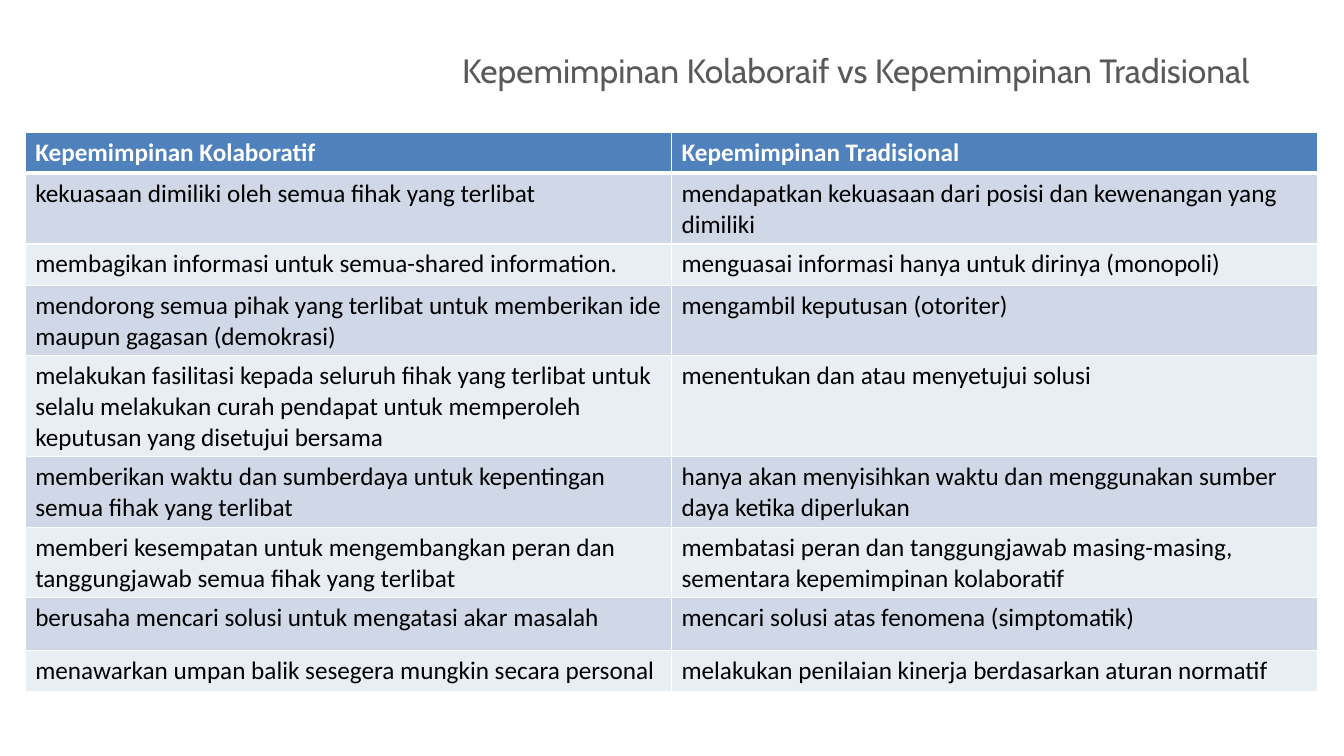
from lxml.etree import SubElement
from pptx import Presentation
from pptx.dml.color import RGBColor
from pptx.enum.text import MSO_ANCHOR, PP_ALIGN
from pptx.oxml.ns import qn
from pptx.util import Emu, Pt

PX = 9144  # one px is a hundredth of an inch

WHITE = RGBColor(0xFF, 0xFF, 0xFF)
BLACK = RGBColor(0x00, 0x00, 0x00)
GREY = RGBColor(0x59, 0x59, 0x59)
HEADER_BLUE = RGBColor(0x4F, 0x81, 0xBD)
BAND_DARK = RGBColor(0xD0, 0xD8, 0xE8)
BAND_LIGHT = RGBColor(0xE9, 0xED, 0xF4)

TITLE = "Kepemimpinan Kolaboraif vs Kepemimpinan Tradisional"
COMPARISON = [
    ("Kepemimpinan Kolaboratif", "Kepemimpinan Tradisional"),
    ("kekuasaan dimiliki oleh semua fihak yang terlibat",
     "mendapatkan kekuasaan dari posisi dan kewenangan yang dimiliki"),
    ("membagikan informasi untuk semua-shared information.",
     "menguasai informasi hanya untuk dirinya (monopoli)"),
    ("mendorong semua pihak yang terlibat untuk memberikan ide maupun gagasan (demokrasi)",
     "mengambil keputusan (otoriter)"),
    ("melakukan fasilitasi kepada seluruh fihak yang terlibat untuk selalu melakukan "
     "curah pendapat untuk memperoleh keputusan yang disetujui bersama",
     "menentukan dan atau menyetujui solusi"),
    ("memberikan waktu dan sumberdaya untuk kepentingan semua fihak yang terlibat",
     "hanya akan menyisihkan waktu dan menggunakan sumber daya ketika diperlukan"),
    ("memberi kesempatan untuk mengembangkan peran dan tanggungjawab semua fihak yang terlibat",
     "membatasi peran dan tanggungjawab masing-masing, sementara kepemimpinan kolaboratif"),
    ("berusaha mencari solusi untuk mengatasi akar masalah",
     "mencari solusi atas fenomena (simptomatik)"),
    ("menawarkan umpan balik sesegera mungkin secara personal",
     "melakukan penilaian kinerja berdasarkan aturan normatif"),
]
COLUMN_WIDTH = 641
ROW_HEIGHT = 41
TALL_ROW, TALL_ROW_HEIGHT = 7, 52


def px(length):
    return Emu(length * PX)


def add_run(paragraph, text, font_name, size, color, bold=False):
    run = paragraph.add_run()
    run.text = text
    run.font.name = font_name
    run.font.size = Pt(size)
    run.font.color.rgb = color
    run.font.bold = bold


def add_title(slide, text, left, top, width, height):
    shape = slide.shapes.add_textbox(px(left), px(top), px(width), px(height))
    frame = shape.text_frame
    frame.word_wrap = True
    frame.vertical_anchor = MSO_ANCHOR.MIDDLE
    paragraph = frame.paragraphs[0]
    paragraph.alignment = PP_ALIGN.RIGHT
    add_run(paragraph, text, "Cabin", 24, GREY)


def set_borders(cell, color, widths):
    properties = cell._tc.get_or_add_tcPr()
    for side, width in widths.items():
        line = SubElement(properties, qn(f"a:ln{side}"), w=str(Pt(width)))
        fill = SubElement(line, qn("a:solidFill"))
        SubElement(fill, qn("a:srgbClr"), val=str(color))


def fill_cell(cell, text, row_index):
    is_header = row_index == 0
    # The rule between header and body is thicker than the others
    set_borders(cell, WHITE, {
        "L": 1,
        "R": 1,
        "T": 3 if row_index == 1 else 1,
        "B": 3 if is_header else 1,
    })
    cell.fill.solid()
    if is_header:
        cell.fill.fore_color.rgb = HEADER_BLUE
    else:
        cell.fill.fore_color.rgb = BAND_DARK if row_index % 2 else BAND_LIGHT
    add_run(cell.text_frame.paragraphs[0], text, "Calibri", 18,
            WHITE if is_header else BLACK, is_header)


def add_comparison_table(slide, rows, left, top):
    column_count = len(rows[0])
    heights = [TALL_ROW_HEIGHT if index == TALL_ROW else ROW_HEIGHT
               for index in range(len(rows))]
    table = slide.shapes.add_table(
        len(rows), column_count, px(left), px(top),
        px(COLUMN_WIDTH * column_count), px(sum(heights))).table
    for column in table.columns:
        column.width = px(COLUMN_WIDTH)
    for row_index, texts in enumerate(rows):
        table.rows[row_index].height = px(heights[row_index])
        for column_index, text in enumerate(texts):
            fill_cell(table.cell(row_index, column_index), text, row_index)


def main():
    presentation = Presentation()
    presentation.slide_width = px(1333)
    presentation.slide_height = px(750)
    slide = presentation.slides.add_slide(presentation.slide_layouts[6])

    # Heading
    add_title(slide, TITLE, 147, 46, 1102, 47)

    # Comparison of the two leadership styles
    add_comparison_table(slide, COMPARISON, 25, 131)

    presentation.save("out.pptx")


if __name__ == "__main__":
    main()
